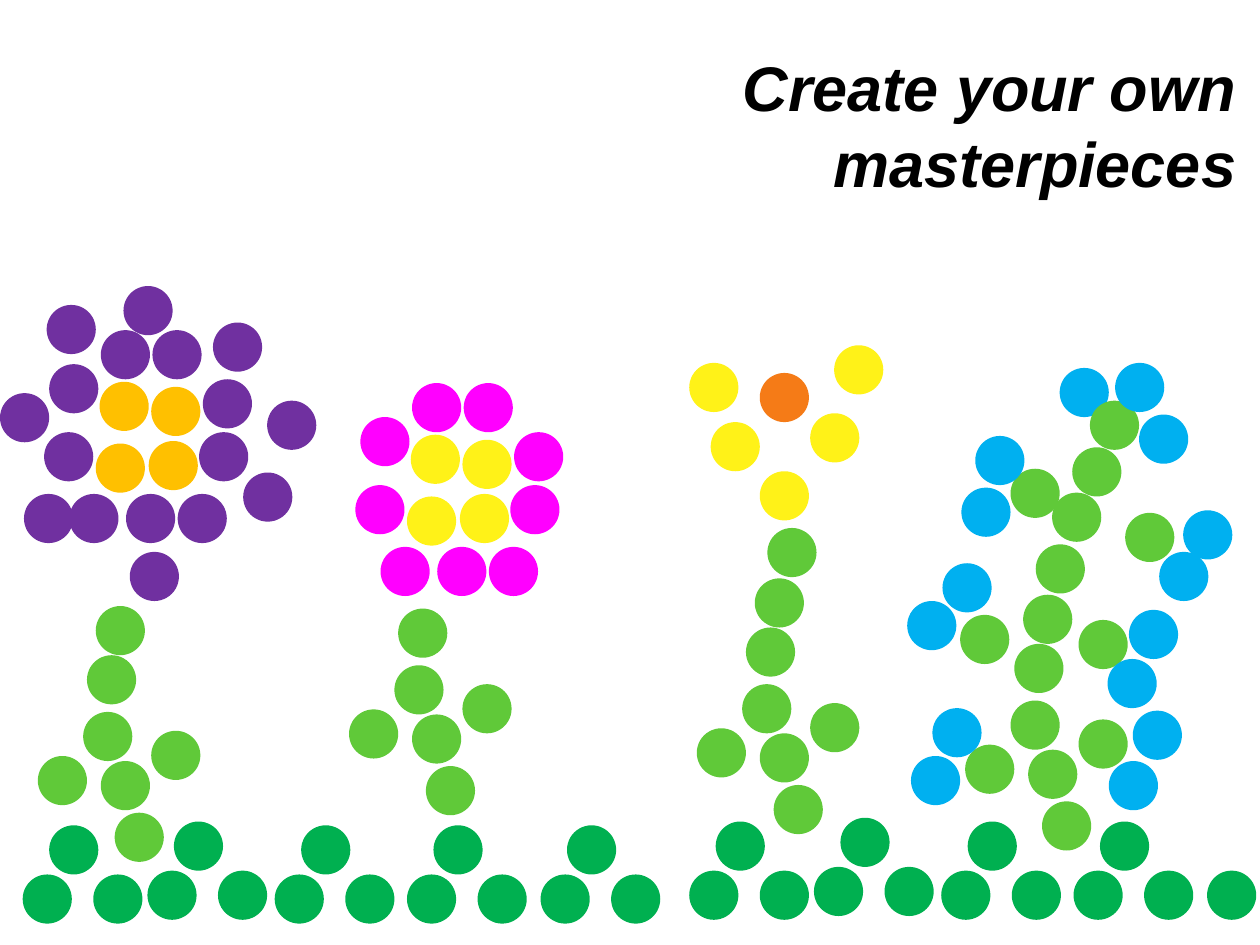
import dataclasses
import typing

import pptx
import pptx.dml.color
import pptx.enum.shapes
import pptx.enum.text
import pptx.oxml
import pptx.oxml.ns
import pptx.slide
import pptx.util

Inches = pptx.util.Inches


class Point(typing.NamedTuple):
    x: float
    y: float


Pattern = tuple[tuple[float, float], ...]


@dataclasses.dataclass(frozen=True)
class Theme:
    font: str = "Arial"
    title_size: int = 36
    dot_size: float = 0.39
    ink: str = "000000"
    paper: str = "FFFFFF"
    paper_opacity: int = 78
    yellow: str = "FFF218"
    pink: str = "FF00FF"
    orange: str = "F57B17"
    amber: str = "FFC000"
    purple: str = "7030A0"
    blue: str = "00B0F0"
    leaf: str = "60C939"
    grass: str = "00B050"


@dataclasses.dataclass(frozen=True)
class Dots:
    """A pattern of dots in one colour, shifted to its origin."""

    color: str
    pattern: Pattern
    origin: Point = Point(0, 0)


THEME = Theme()

# Patterns shared by several plants, relative to their origin
CORE = ((0.41, 0.9), (0.83, 0.88), (0.44, 0.41), (0.85, 0.45))
RING = ((0.65, 1.3), (0.2, 1.3), (0, 0.81), (0.04, 0.27), (0.45, 0),
        (0.86, 0), (1.26, 0.39), (1.23, 0.81), (1.06, 1.3))
STEM = ((0.2, -1.24), (0.1, -0.84), (0.03, -0.45), (0, 0), (0.14, 0.39),
        (0.54, 0.15), (-0.36, 0.35), (0.25, 0.8))
TUFT = ((0, 0.39), (0.21, 0), (0.56, 0.39))

# Dots belonging to one plant only, placed on the page
YELLOW_PETALS = ((5.47, 2.88), (5.64, 3.35), (6.03, 3.74), (6.43, 3.28),
                 (6.62, 2.74))
PURPLE_TIPS = ((1.69, 2.56), (1.93, 3.75), (0.19, 3.92), (0.37, 2.42),
               (0.98, 2.27), (1.03, 4.38), (2.12, 3.18), (0, 3.12))
BUSH_BRANCHES = ((8.56, 4.92), (7.62, 4.88), (8.35, 3.91), (8.93, 4.07),
                 (8.02, 3.72))
BUSH_FLOWERS = ((7.23, 6), (7.2, 4.77), (7.74, 3.46), (8.41, 2.92),
                (9.39, 4.05), (8.96, 4.84), (8.99, 5.64), (7.4, 5.62),
                (7.48, 4.47), (7.63, 3.87), (9.2, 4.38), (8.79, 5.23),
                (8.8, 6.04))
BUSH_TOP = ((8.51, 3.55), (8.65, 3.18))
BUSH_TOP_FLOWERS = ((8.85, 2.88), (9.04, 3.29))

TUFT_ORIGINS = (Point(0.18, 6.55), Point(1.17, 6.52), Point(2.18, 6.55),
                Point(3.23, 6.55), Point(4.29, 6.55), Point(5.47, 6.52),
                Point(6.46, 6.49), Point(7.47, 6.52), Point(8.52, 6.52))


def bloom(core_color: str, ring_color: str, origin: Point) -> list[Dots]:
    return [Dots(core_color, CORE, origin), Dots(ring_color, RING, origin)]


def stem(origin: Point, skipped: int = 0) -> Dots:
    """A stem with two leaves; skipped dots shorten it from the top."""
    return Dots(THEME.leaf, STEM[skipped:], origin)


GARDEN = [
    *bloom(THEME.yellow, THEME.pink, Point(2.82, 3.04)),
    stem(Point(3.13, 5.28), skipped=2),
    Dots(THEME.yellow, YELLOW_PETALS),
    Dots(THEME.orange, ((6.03, 2.96),)),
    stem(Point(5.89, 5.43)),
    *(Dots(THEME.grass, TUFT, origin) for origin in TUFT_ORIGINS),
    Dots(THEME.grass, ((9.58, 6.91),)),
    *bloom(THEME.amber, THEME.purple, Point(0.35, 2.62)),
    stem(Point(0.66, 5.65), skipped=1),
    Dots(THEME.purple, PURPLE_TIPS),
    stem(Point(8.02, 5.56)),
    Dots(THEME.leaf, BUSH_BRANCHES),
    Dots(THEME.blue, BUSH_FLOWERS),
    Dots(THEME.leaf, BUSH_TOP),
    Dots(THEME.blue, BUSH_TOP_FLOWERS),
]


def rgb(color: str) -> pptx.dml.color.RGBColor:
    return pptx.dml.color.RGBColor.from_string(color)


def draw_dots(page: pptx.slide.Slide, dots: Dots) -> None:
    size = Inches(THEME.dot_size)
    for x, y in dots.pattern:
        dot = page.shapes.add_shape(
            pptx.enum.shapes.MSO_SHAPE.OVAL,
            Inches(dots.origin.x + x), Inches(dots.origin.y + y), size, size)
        dot.shadow.inherit = False
        dot.fill.solid()
        dot.fill.fore_color.rgb = rgb(dots.color)
        dot.line.fill.background()


def draw_title(page: pptx.slide.Slide, text: str) -> None:
    box = page.shapes.add_textbox(
        Inches(3.21), Inches(0.15), Inches(6.7), Inches(1.67))
    box.fill.solid()
    box.fill.fore_color.rgb = rgb(THEME.paper)
    color = box.fill._xPr.find(".//" + pptx.oxml.ns.qn("a:srgbClr"))
    alpha = pptx.oxml.parse_xml(
        f'<a:alpha {pptx.oxml.ns.nsdecls("a")} '
        f'val="{THEME.paper_opacity * 1000}"/>')
    color.append(alpha)

    frame = box.text_frame
    frame.word_wrap = True
    frame.vertical_anchor = pptx.enum.text.MSO_ANCHOR.MIDDLE
    frame.text = text
    para = frame.paragraphs[0]
    para.alignment = pptx.enum.text.PP_ALIGN.RIGHT
    font = para.runs[0].font
    font.name = THEME.font
    font.size = pptx.util.Pt(THEME.title_size)
    font.bold = True
    font.italic = True
    font.color.rgb = rgb(THEME.ink)


def main() -> None:
    deck = pptx.Presentation()
    deck.slide_width = Inches(10)
    deck.slide_height = Inches(7.5)
    page = deck.slides.add_slide(deck.slide_layouts[6])
    for dots in GARDEN:
        draw_dots(page, dots)
    draw_title(page, "Create your own masterpieces")
    deck.save("out.pptx")


if __name__ == "__main__":
    main()
